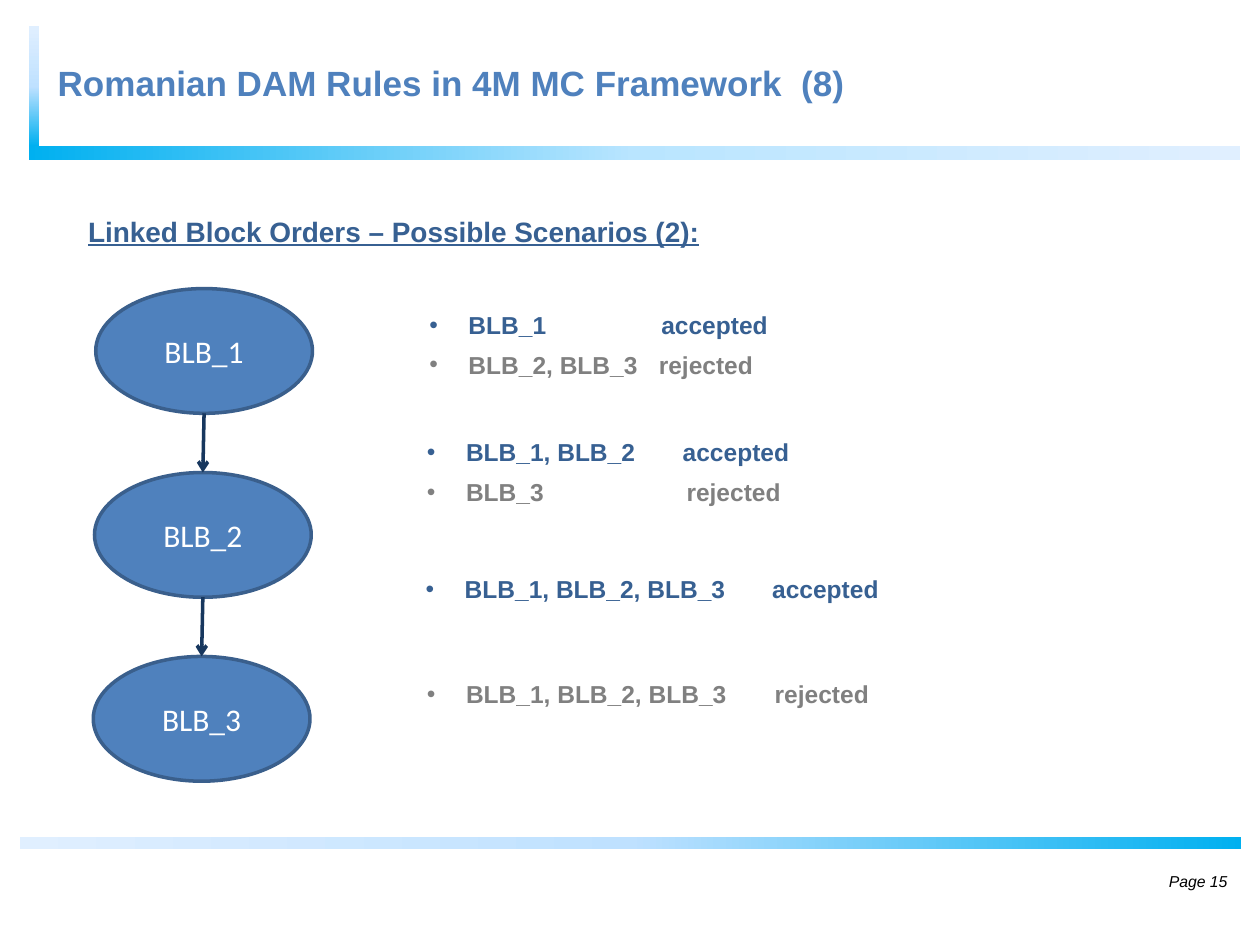
from copy import deepcopy
from typing import NamedTuple

from lxml.etree import SubElement
from pptx import Presentation
from pptx.dml.color import RGBColor
from pptx.enum.shapes import MSO_CONNECTOR, MSO_SHAPE
from pptx.enum.text import MSO_ANCHOR, PP_ALIGN
from pptx.oxml.ns import qn
from pptx.util import Inches, Pt

BLUE, NAVY, GREY, FILL = "376092", "17375E", "808080", "4F81BD"
SKY, MID, PALE = "00B0F0", "BFE1FF", "E0EFFF"
INDENT = 0.31


class Bar(NamedTuple):
    left: float
    top: float
    width: float
    height: float
    angle: int
    stops: tuple


class Line(NamedTuple):
    blocks: str
    state: str
    tab: float


class Case(NamedTuple):
    left: float
    top: float
    lines: tuple


class Node(NamedTuple):
    name: str
    left: float
    top: float


BARS = (
    Bar(0.23, 1.16, 9.61, 0.11, 0, (SKY, "B9E5FF", PALE)),
    Bar(0.23, 0.21, 0.08, 0.95, 90, (SKY, MID, PALE)),
    Bar(0.16, 6.64, 9.69, 0.1, 0, (PALE, MID, SKY)),
)
CASES = (
    Case(3.31, 2.41, (Line("BLB_1", "accepted", 1.84),
                      Line("BLB_2, BLB_3", "rejected", 1.82))),
    Case(3.29, 3.42, (Line("BLB_1, BLB_2", "accepted", 2.03),
                      Line("BLB_3", "rejected", 2.06))),
    Case(3.28, 4.51, (Line("BLB_1, BLB_2, BLB_3", "accepted", 2.75),)),
    Case(3.29, 5.34, (Line("BLB_1, BLB_2, BLB_3", "rejected", 2.76),)),
)
NODES = [Node(f"BLB_{i + 1}", 0.76 - 0.01 * i, 2.29 + 1.46 * i) for i in range(3)]
NODE_W, NODE_H = 1.72, 0.99


def color(code: str) -> RGBColor:
    return RGBColor.from_string(code)


def write(para, text: str, *, size: float, hue: str, font: str = "Arial",
          align=PP_ALIGN.LEFT, **style) -> None:
    """Fill a paragraph; style holds font flags such as bold."""
    para.alignment = align
    run = para.add_run()
    run.text = text
    run.font.size, run.font.name = Pt(size), font
    run.font.color.rgb = color(hue)
    for flag, value in style.items():
        setattr(run.font, flag, value)


def add_box(slide, left: float, top: float, width: float, height: float,
            anchor=MSO_ANCHOR.TOP):
    box = slide.shapes.add_textbox(*map(Inches, (left, top, width, height)))
    box.text_frame.word_wrap = True
    box.text_frame.vertical_anchor = anchor
    return box


def draw_bar(slide, bar: Bar) -> None:
    shape = slide.shapes.add_shape(MSO_SHAPE.RECTANGLE, *map(Inches, bar[:4]))
    shape.shadow.inherit = False
    shape.line.fill.background()
    fill = shape.fill
    fill.gradient()
    fill.gradient_angle = bar.angle
    first = shape._element.spPr.find(".//" + qn("a:gs"))
    first.addnext(deepcopy(first))
    for stop, place, hue in zip(fill.gradient_stops, (0, 0.5, 1), bar.stops):
        stop.position = place
        stop.color.rgb = color(hue)


def draw_node(slide, node: Node) -> None:
    oval = slide.shapes.add_shape(
        MSO_SHAPE.OVAL, *map(Inches, (node.left, node.top, NODE_W, NODE_H)))
    oval.shadow.inherit = False
    oval.fill.solid()
    oval.fill.fore_color.rgb = color(FILL)
    oval.line.color.rgb = color("3A5F8C")
    oval.line.width = Pt(2)
    oval.text_frame.vertical_anchor = MSO_ANCHOR.MIDDLE
    write(oval.text_frame.paragraphs[0], node.name, size=18, hue="FFFFFF",
          font="Calibri", align=PP_ALIGN.CENTER)


def draw_link(slide, start: Node, end: Node) -> None:
    """Draw an arrow from the foot of one node to the head of the next."""
    ends = (start.left + NODE_W / 2, start.top + NODE_H,
            end.left + NODE_W / 2, end.top)
    link = slide.shapes.add_connector(MSO_CONNECTOR.STRAIGHT, *map(Inches, ends))
    link.line.color.rgb = color(NAVY)
    link.line.width = Pt(2)
    SubElement(link.line._get_or_add_ln(), qn("a:tailEnd"), type="arrow")
    SubElement(link._element.spPr, qn("a:effectLst"))


def add_bullet(para, tab: float) -> None:
    """Give a paragraph a hanging bullet and one tab stop."""
    props = para._p.get_or_add_pPr()
    props.set("marL", str(Inches(INDENT)))
    props.set("indent", str(Inches(-INDENT)))
    SubElement(props, qn("a:buFont"), typeface="Arial")
    SubElement(props, qn("a:buChar"), char="•")
    tabs = SubElement(props, qn("a:tabLst"))
    SubElement(tabs, qn("a:tab"), pos=str(Inches(tab)), algn="l")


def draw_case(slide, case: Case) -> None:
    height = 0.02 + 0.32 * len(case.lines)
    frame = add_box(slide, case.left, case.top, 6.02, height).text_frame
    for i, line in enumerate(case.lines):
        para = frame.add_paragraph() if i else frame.paragraphs[0]
        add_bullet(para, line.tab)
        if i:
            para.space_before = Pt(6)
        write(para, f"{line.blocks}\t{line.state}", size=14, bold=True,
              hue=BLUE if line.state == "accepted" else GREY)


def main() -> None:
    deck = Presentation()
    deck.slide_width, deck.slide_height = Inches(10), Inches(7.5)
    slide = deck.slides.add_slide(deck.slide_layouts[6])

    for bar in BARS:
        draw_bar(slide, bar)
    page = add_box(slide, 8.75, 6.79, 1.09, 0.4, MSO_ANCHOR.MIDDLE)
    write(page.text_frame.paragraphs[0], "Page 15", size=9, hue="000000",
          align=PP_ALIGN.RIGHT, italic=True)
    head = add_box(slide, 0.6, 1.65, 9.29, 0.37)
    write(head.text_frame.paragraphs[0],
          "Linked Block Orders – Possible Scenarios (2):",
          size=16, hue=BLUE, bold=True, underline=True)
    title = add_box(slide, 0.36, 0.44, 9.64, 0.54)
    title.fill.solid()
    title.fill.fore_color.rgb = color("FFFFFF")
    write(title.text_frame.paragraphs[0],
          "Romanian DAM Rules in 4M MC Framework  (8)",
          size=20, hue=FILL, bold=True)

    for node in NODES:
        draw_node(slide, node)
    for start, end in zip(NODES, NODES[1:]):
        draw_link(slide, start, end)
    for case in CASES:
        draw_case(slide, case)
    deck.save("out.pptx")


if __name__ == "__main__":
    main()
